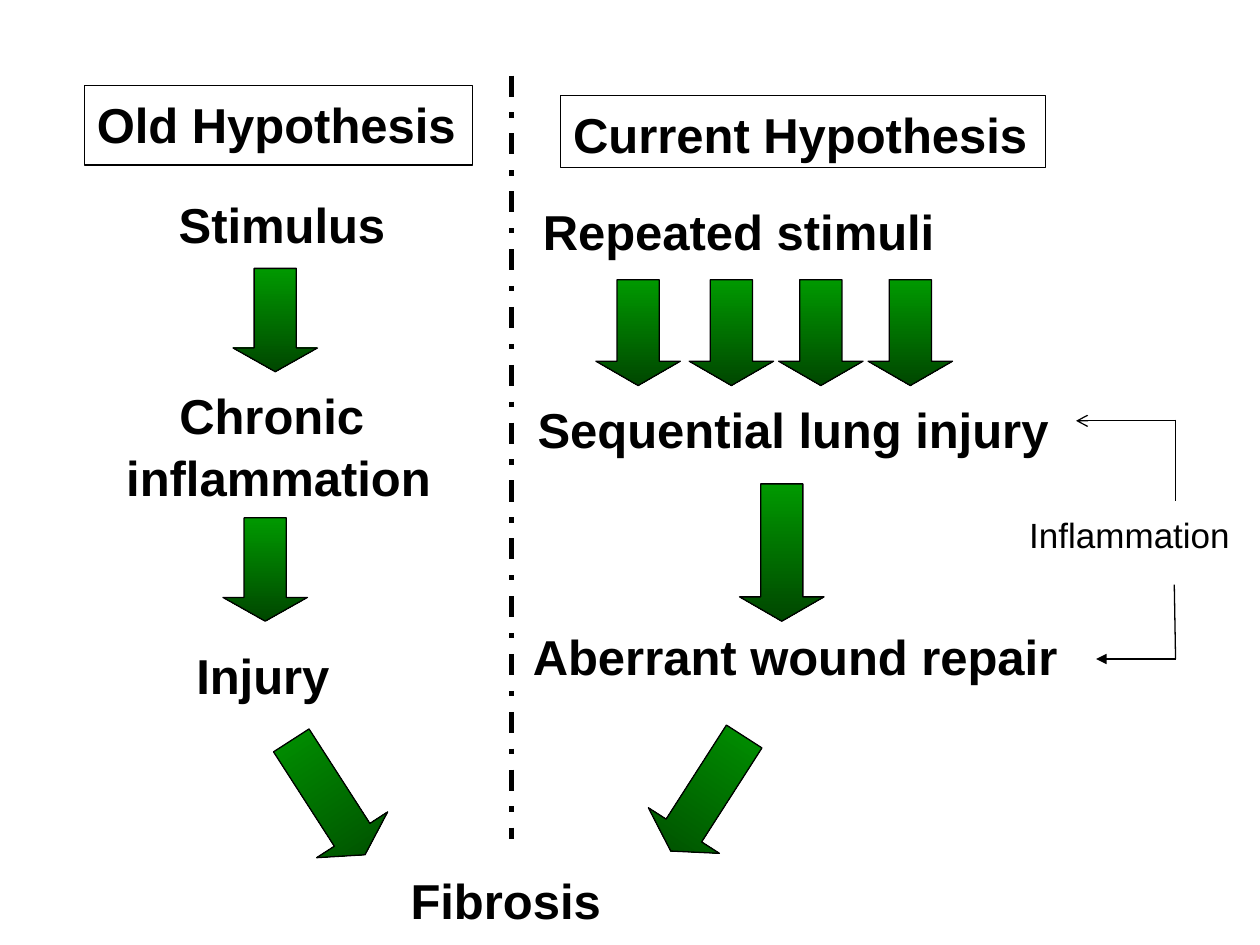
from pptx import Presentation
from pptx.dml.color import RGBColor as RGB
from pptx.enum.dml import MSO_LINE as Dash
from pptx.enum.shapes import MSO_CONNECTOR as Conn, MSO_SHAPE as Shape
from pptx.enum.text import MSO_ANCHOR as Anchor, MSO_AUTO_SIZE as Fit, PP_ALIGN as Align
from pptx.oxml.ns import qn
from pptx.util import Inches, Pt
from lxml.etree import SubElement

BLACK = RGB(0x00, 0x00, 0x00)
GREEN = RGB(0x00, 0x99, 0x00)
DARK = RGB(0x00, 0x47, 0x00)


class Board:
    """Holds the style and the current slide."""

    font = "Arial"
    thin = Pt(0.75)
    width = 0.67  # block arrow width

    def __init__(self, slide):
        self.slide = slide

    def letter(self, shape, text, size, bold, align):
        frame = shape.text_frame
        frame.text = text
        frame.word_wrap = False
        frame.vertical_anchor = Anchor.TOP
        for para in frame.paragraphs:
            para.alignment = align
            para.line_spacing = 1.05
            for run in para.runs:
                run.font.name = self.font
                run.font.size = Pt(size)
                run.font.bold = bold
                run.font.color.rgb = BLACK

    def label(self, text, x, y, w, h, size=28, bold=True, align=Align.LEFT):
        box = self.slide.shapes.add_textbox(Inches(x), Inches(y), Inches(w), Inches(h))
        self.letter(box, text, size, bold, align)
        box.text_frame.auto_size = Fit.SHAPE_TO_FIT_TEXT

    def outline(self, shape):
        shape.shadow.inherit = False
        shape.line.color.rgb = BLACK
        shape.line.width = self.thin

    def header(self, text, x, y, w, h):
        box = self.slide.shapes.add_shape(
            Shape.RECTANGLE, Inches(x), Inches(y), Inches(w), Inches(h))
        self.outline(box)
        box.fill.background()
        self.letter(box, text, 28, True, Align.LEFT)

    def arrow(self, x, y, h, head, turn=0):
        block = self.slide.shapes.add_shape(
            Shape.DOWN_ARROW, Inches(x), Inches(y), Inches(self.width), Inches(h))
        self.outline(block)
        block.adjustments[0] = 0.5
        block.adjustments[1] = head
        block.rotation = turn
        block.fill.gradient()
        block.fill.gradient_angle = 270
        for stop, color, place in zip(block.fill.gradient_stops, (GREEN, DARK), (0, 1)):
            stop.color.rgb = color
            stop.position = place

    def line(self, x1, y1, x2, y2, width=None, dash=None, tip=None):
        link = self.slide.shapes.add_connector(
            Conn.STRAIGHT, Inches(x1), Inches(y1), Inches(x2), Inches(y2))
        link.line.color.rgb = BLACK
        link.line.width = width or self.thin
        if dash:
            link.line.dash_style = dash
        props = link._element.spPr
        if tip:
            SubElement(props.find(qn("a:ln")), qn("a:tailEnd"), type=tip)
        SubElement(props, qn("a:effectLst"))


def main():
    deck = Presentation()
    deck.slide_width, deck.slide_height = Inches(10), Inches(7.5)
    board = Board(deck.slides.add_slide(deck.slide_layouts[6]))

    # Old hypothesis
    board.header("Old Hypothesis", 0.67, 0.68, 3.08, 0.63)
    board.label("Stimulus", 1.32, 1.47, 1.84, 0.62)
    board.label("Chronic \ninflammation", 0.9, 2.99, 2.62, 1.13, align=Align.CENTER)
    board.label("Injury", 1.46, 5.05, 1.26, 0.62)
    for x, y, h, turn in ((1.85, 2.13, 0.82, 0), (1.77, 4.11, 0.82, 0),
                          (2.27, 5.79, 1.08, 327.2)):
        board.arrow(x, y, h, 0.281, turn)

    # Divider and shared outcome
    board.line(4.06, 0.6, 4.06, 6.66, Pt(3), Dash.DASH_DOT)
    board.label("Fibrosis", 3.16, 6.84, 1.72, 0.57)

    # Current hypothesis
    board.header("Current Hypothesis", 4.45, 0.76, 3.85, 0.57)
    board.label("Repeated stimuli", 4.21, 1.53, 3.34, 0.57)
    board.label("Sequential lung injury", 4.16, 3.1, 4.27, 0.57, align=Align.CENTER)
    board.label("Aberrant wound repair", 4.13, 4.9, 4.39, 0.58)
    for x in (4.73, 5.47, 6.18, 6.89):
        board.arrow(x, 2.22, 0.84, 0.288)
    board.arrow(5.87, 3.84, 1.09, 0.288)
    board.arrow(5.28, 5.76, 1.08, 0.288, 32.7)

    # Inflammation feedback
    board.label("Inflammation", 8.07, 4.01, 1.8, 0.49, size=20, bold=False)
    board.line(9.33, 3.33, 9.33, 3.98)
    board.line(9.32, 4.64, 9.33, 5.23)
    board.line(9.33, 3.34, 8.54, 3.34, tip="arrow")
    board.line(9.33, 5.23, 8.7, 5.23, tip="triangle")

    deck.save("out.pptx")


if __name__ == "__main__":
    main()
